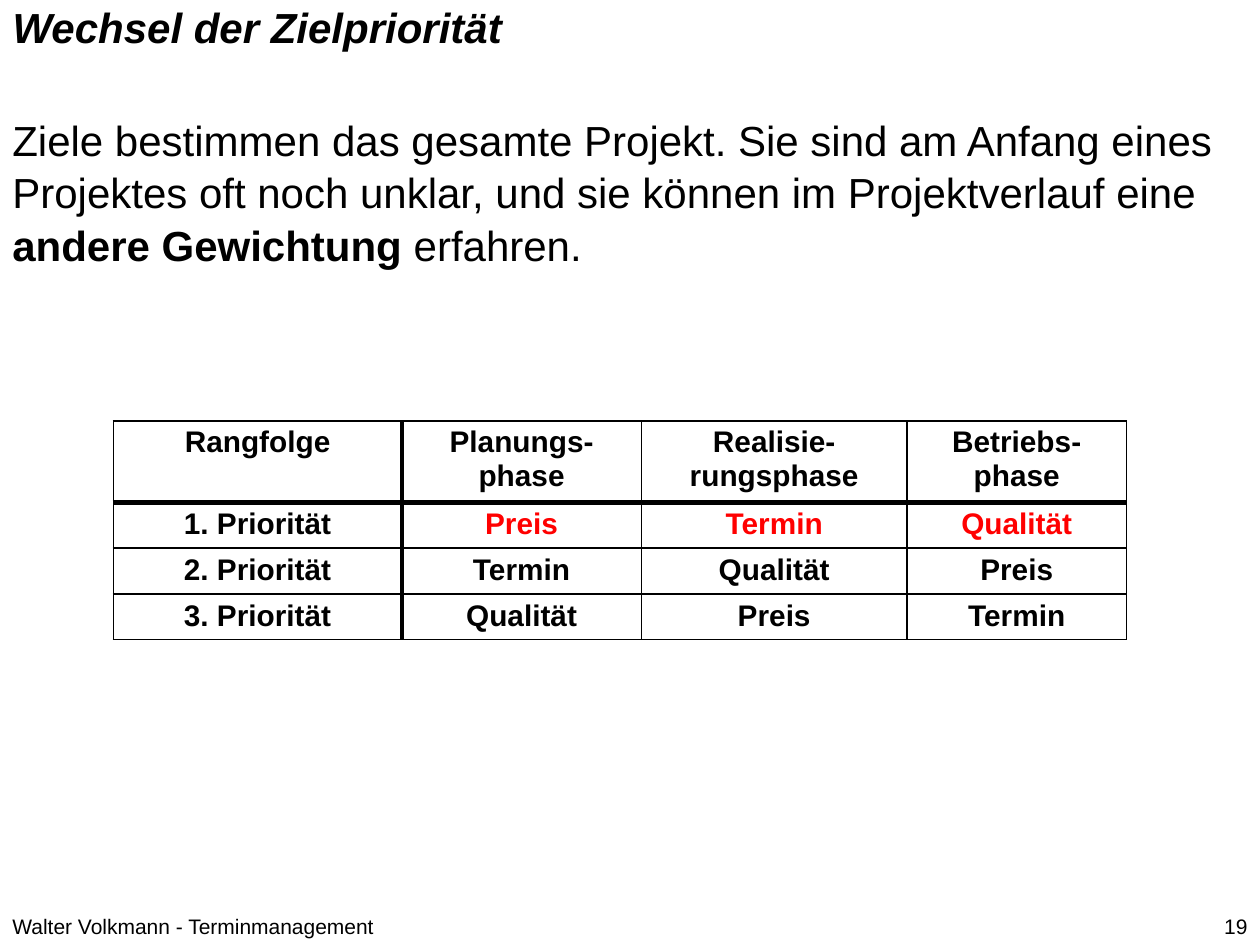
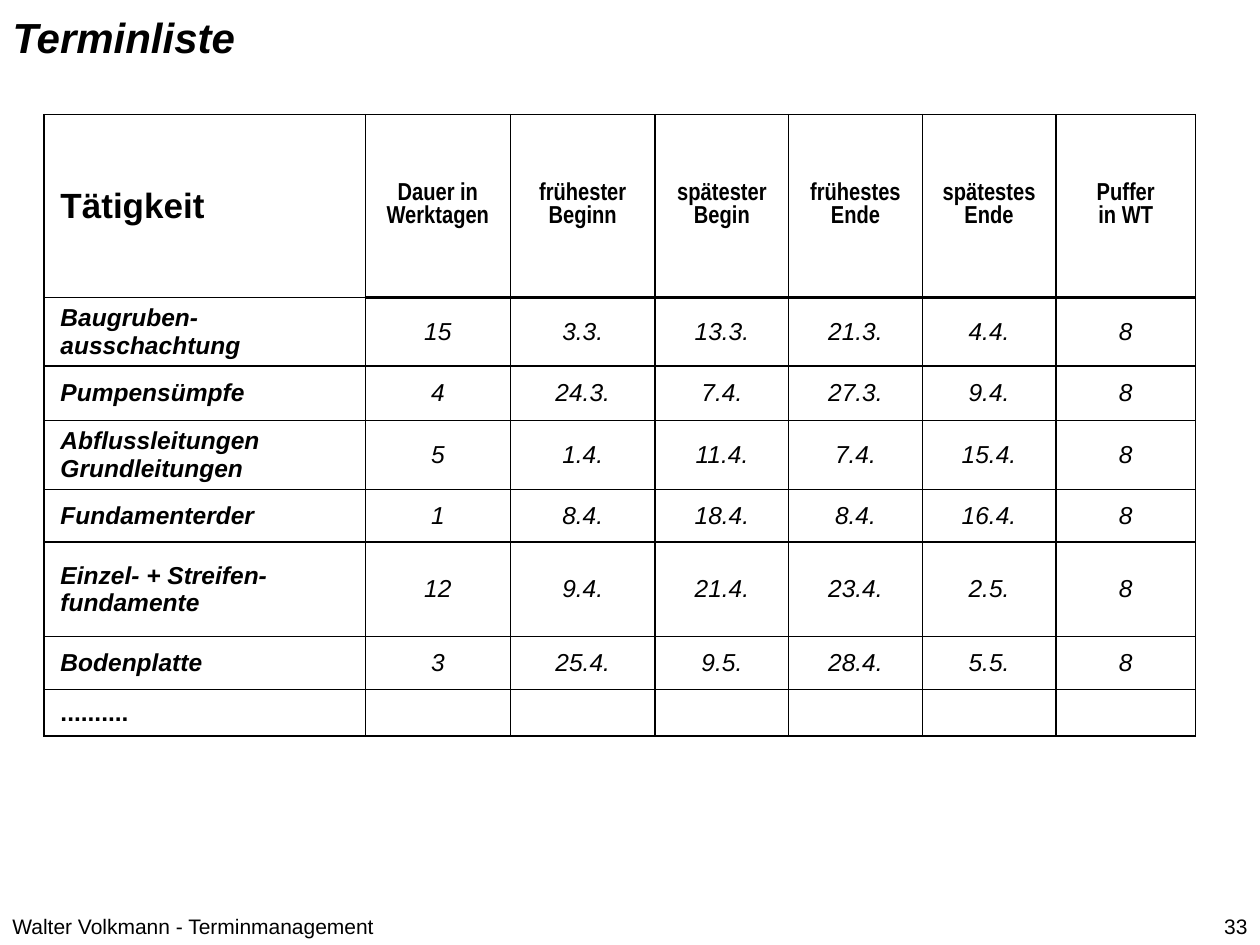
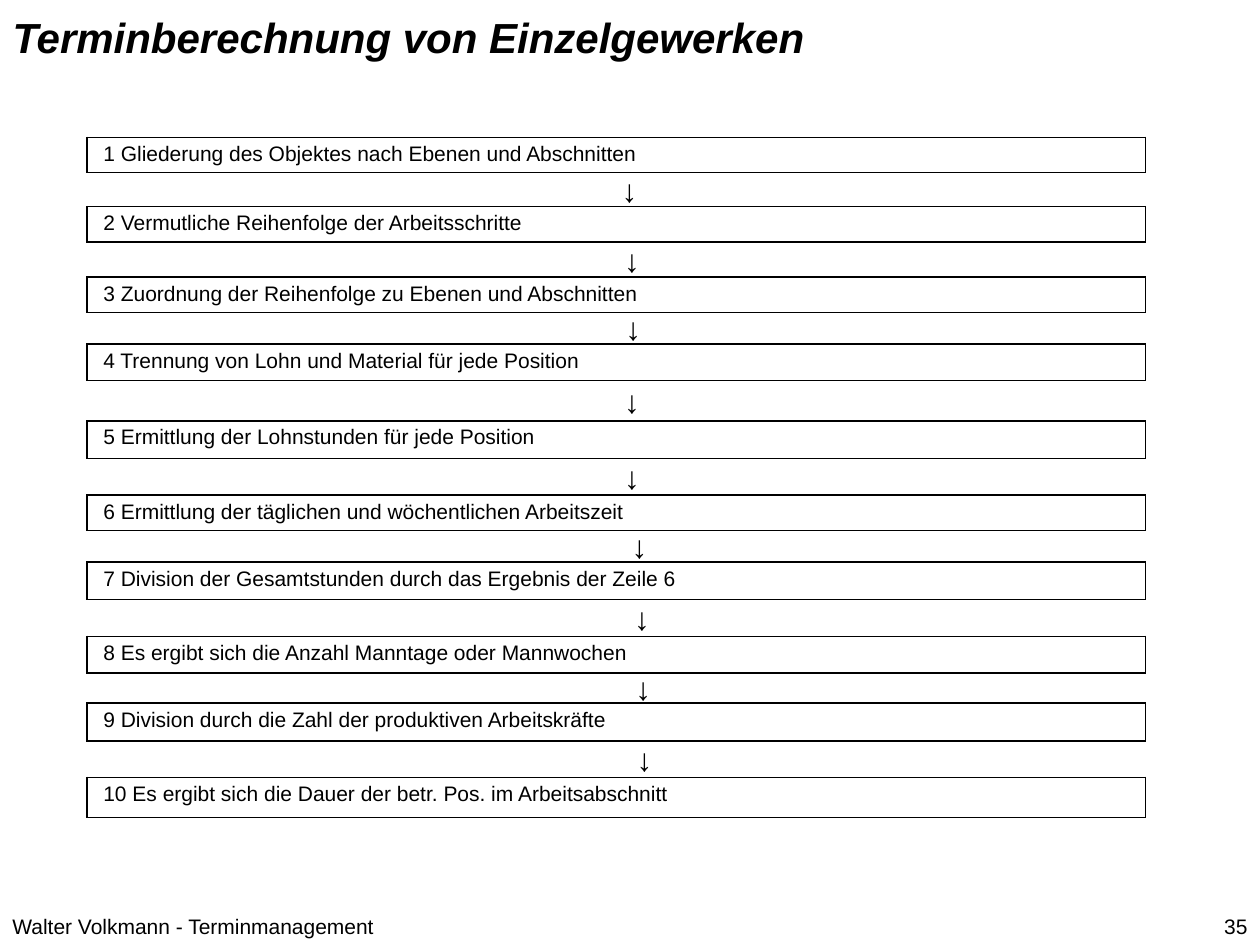
from dataclasses import dataclass, replace
from itertools import pairwise

from lxml.etree import SubElement
from pptx import Presentation
from pptx.dml.color import RGBColor
from pptx.enum.text import MSO_ANCHOR, MSO_AUTO_SIZE, PP_ALIGN
from pptx.oxml.ns import qn
from pptx.util import Emu, Inches, Pt

COLUMNS, ROWS = 100, 75
FOOTER = "Walter Volkmann - Terminmanagement"


@dataclass(frozen=True)
class TextStyle:
    size: int
    bold: bool = False
    italic: bool = False
    face: str = "Arial"
    color: str = "000000"
    align: PP_ALIGN = PP_ALIGN.LEFT
    spacing: float = 1.0


@dataclass(frozen=True)
class Theme:
    ink: str = "000000"
    thin: float = 1
    title: TextStyle = TextStyle(24, bold=True, italic=True)
    body: TextStyle = TextStyle(24, spacing=1.05)
    footer: TextStyle = TextStyle(12)
    number: TextStyle = TextStyle(12, align=PP_ALIGN.RIGHT)
    priority: TextStyle = TextStyle(17, bold=True, align=PP_ALIGN.CENTER)
    top_priority: TextStyle = replace(priority, color="FF0000")
    activity_head: TextStyle = TextStyle(20, bold=True)
    date_head: TextStyle = TextStyle(14, bold=True, face="Arial Narrow", align=PP_ALIGN.CENTER)
    activity: TextStyle = TextStyle(14, bold=True, italic=True)
    more: TextStyle = TextStyle(14, bold=True)
    date: TextStyle = TextStyle(14, italic=True, align=PP_ALIGN.CENTER)
    step: TextStyle = TextStyle(12)
    arrow: TextStyle = TextStyle(18, bold=True, align=PP_ALIGN.CENTER)


def style_paragraph(para, style):
    para.alignment = style.align
    para.line_spacing = style.spacing
    font = para.font
    font.name, font.size = style.face, Pt(style.size)
    font.bold, font.italic = style.bold, style.italic
    font.color.rgb = RGBColor.from_string(style.color)


def draw_borders(cell, widths, color):
    """Set the cell's left, right, top and bottom lines, widths in points."""
    properties = cell._tc.get_or_add_tcPr()
    for index, (side, width) in enumerate(zip("LRTB", widths)):
        line = SubElement(properties, qn(f"a:ln{side}"), w=str(Pt(width)))
        fill = SubElement(line, qn("a:solidFill"))
        SubElement(fill, qn("a:srgbClr"), val=color)
        properties.insert(index, line)


class SlideBuilder:
    def __init__(self, deck, theme):
        self.deck, self.theme = deck, theme
        self.page = None

    def area(self, left, top, width, height):
        """Turn grid columns and rows into slide lengths."""
        column, row = self.deck.slide_width / COLUMNS, self.deck.slide_height / ROWS
        return [Emu(round(value)) for value in
                (left * column, top * row, width * column, height * row)]

    def start(self, title, number, title_spacing=1.0):
        self.page = self.deck.slides.add_slide(self.deck.slide_layouts[5])
        box = self.page.shapes.title
        box.left, box.top, box.width, box.height = self.area(0, 0, COLUMNS, 5)
        frame = box.text_frame
        frame.auto_size = MSO_AUTO_SIZE.NONE
        frame.vertical_anchor = MSO_ANCHOR.TOP
        frame.margin_top, frame.margin_bottom = Inches(0.09), 0
        frame.text = title
        style_paragraph(frame.paragraphs[0], replace(self.theme.title, spacing=title_spacing))
        self.text([FOOTER], (0, 72, 30.9, 3), self.theme.footer, wrap=False)
        self.text([str(number)], (94.4, 72, 5.6, 3), self.theme.number)

    def text(self, spans, place, style, anchor=MSO_ANCHOR.TOP, wrap=True):
        """Add a text box; every second span is emphasised in bold."""
        frame = self.page.shapes.add_textbox(*self.area(*place)).text_frame
        frame.word_wrap = wrap
        frame.vertical_anchor = anchor
        para = frame.paragraphs[0]
        style_paragraph(para, style)
        for index, words in enumerate(spans):
            span = para.add_run()
            span.text = words
            if index % 2:
                span.font.bold = True

    def table(self, corner, widths, heights, rows, style_of, anchor=MSO_ANCHOR.TOP,
              key_line=None, head_lines=None):
        """Add a ruled table; key_line follows column one, head_lines lie under row one."""
        thin = self.theme.thin
        key_line = key_line or thin
        head_lines = head_lines or [thin] * len(widths)
        place = self.area(*corner, sum(widths), sum(heights))
        table = self.page.shapes.add_table(len(rows), len(widths), *place).table
        table.first_row = table.horz_banding = False
        for column, width in zip(table.columns, widths):
            column.width = self.area(0, 0, width, 0)[2]
        for row, height in zip(table.rows, heights):
            row.height = self.area(0, 0, 0, height)[3]
        for r, texts in enumerate(rows):
            for c, words in enumerate(texts):
                cell = table.cell(r, c)
                cell.margin_left = cell.margin_right = Inches(0.13)
                cell.margin_top = cell.margin_bottom = Inches(0.04)
                cell.vertical_anchor = anchor
                cell.fill.background()
                para = cell.text_frame.paragraphs[0]
                para.text = words
                style_paragraph(para, style_of(r, c))
                lines = (key_line if c == 1 else thin, key_line if c == 0 else thin,
                         head_lines[c] if r == 1 else thin, head_lines[c] if r == 0 else thin)
                draw_borders(cell, lines, self.theme.ink)


def build_priorities(builder):
    theme = builder.theme
    builder.start("Wechsel der Zielpriorität", 19, title_spacing=0.8)
    rows = [
        ["Rangfolge", "Planungs-phase", "Realisie-rungsphase", "Betriebs-phase"],
        ["1. Priorität", "Preis", "Termin", "Qualität"],
        ["2. Priorität", "Termin", "Qualität", "Preis"],
        ["3. Priorität", "Qualität", "Preis", "Termin"],
    ]

    def style_of(r, c):
        return theme.top_priority if r == 1 and c else theme.priority

    builder.table((9, 33.4), [22.9, 19, 21.1, 17.4], [6.4] + [3.6] * 3, rows, style_of,
                  key_line=3, head_lines=[3] * 4)
    builder.text(["Ziele bestimmen das gesamte Projekt. Sie sind am Anfang eines Projektes oft "
                  "noch unklar, und sie können im Projektverlauf eine ",
                  "andere Gewichtung", " erfahren."],
                 (0, 8.6, COLUMNS, 13.1), theme.body, MSO_ANCHOR.MIDDLE)


def build_schedule(builder):
    theme = builder.theme
    builder.start("Terminliste", 33)
    rows = [
        ["Tätigkeit", "Dauer in Werktagen", "frühester Beginn", "spätester Begin",
         "frühestes Ende", "spätestes Ende", "Puffer\vin WT"],
        ["Baugruben-ausschachtung", "15", "3.3.", "13.3.", "21.3.", "4.4.", "8"],
        ["Pumpensümpfe", "4", "24.3.", "7.4.", "27.3.", "9.4.", "8"],
        ["Abflussleitungen Grundleitungen", "5", "1.4.", "11.4.", "7.4.", "15.4.", "8"],
        ["Fundamenterder", "1", "8.4.", "18.4.", "8.4.", "16.4.", "8"],
        ["Einzel- + Streifen-fundamente", "12", "9.4.", "21.4.", "23.4.", "2.5.", "8"],
        ["Bodenplatte", "3", "25.4.", "9.5.", "28.4.", "5.5.", "8"],
        [".........."] + [""] * 6,
    ]

    def style_of(r, c):
        if r == 0:
            return theme.date_head if c else theme.activity_head
        if c:
            return theme.date
        return theme.more if r == len(rows) - 1 else theme.activity

    builder.table((3.5, 9.1), [25.5] + [11.5] * 2 + [10.6] * 3 + [11.1],
                  [14.5, 5.4, 4.3, 5.4, 4.2, 7.5, 4.2, 3.7], rows, style_of,
                  MSO_ANCHOR.MIDDLE, head_lines=[1] + [2] * 6)


def build_steps(builder):
    theme = builder.theme
    builder.start("Terminberechnung von Einzelgewerken", 35)
    steps = [  # top, height, wording
        (10.9, 2.8, "Gliederung des Objektes nach Ebenen und Abschnitten"),
        (16.4, 2.8, "Vermutliche Reihenfolge der Arbeitsschritte"),
        (22, 2.8, "Zuordnung der Reihenfolge zu Ebenen und Abschnitten"),
        (27.3, 2.9, "Trennung von Lohn und Material für jede Position"),
        (33.4, 3, "Ermittlung der Lohnstunden für jede Position"),
        (39.3, 2.7, "Ermittlung der täglichen und wöchentlichen Arbeitszeit"),
        (44.6, 3, "Division der Gesamtstunden durch das Ergebnis der Zeile 6"),
        (50.5, 2.9, "Es ergibt sich die Anzahl Manntage oder Mannwochen"),
        (55.8, 3, "Division durch die Zahl der produktiven Arbeitskräfte"),
        (61.7, 3.2, "Es ergibt sich die Dauer der betr. Pos. im Arbeitsabschnitt"),
    ]
    for number, (top, height, wording) in enumerate(steps, 1):
        builder.table((6.9, top), [84], [height], [[f"{number} {wording}"]],
                      lambda r, c: theme.step)

    arrow_lefts = [46.7, 46.9, 47, 46.9, 46.9, 47.5, 47.7, 47.8, 47.9]
    arrow_height = 4
    for left, (upper, lower) in zip(arrow_lefts, pairwise(steps)):
        gap_middle = (upper[0] + upper[1] + lower[0]) / 2
        builder.text(["↓"], (left, gap_middle - arrow_height / 2, 6.5, arrow_height),
                     theme.arrow, MSO_ANCHOR.MIDDLE)


def main():
    deck = Presentation()
    deck.slide_width, deck.slide_height = Inches(10), Inches(7.5)
    builder = SlideBuilder(deck, Theme())
    build_priorities(builder)
    build_schedule(builder)
    build_steps(builder)
    deck.save("out.pptx")


if __name__ == "__main__":
    main()
